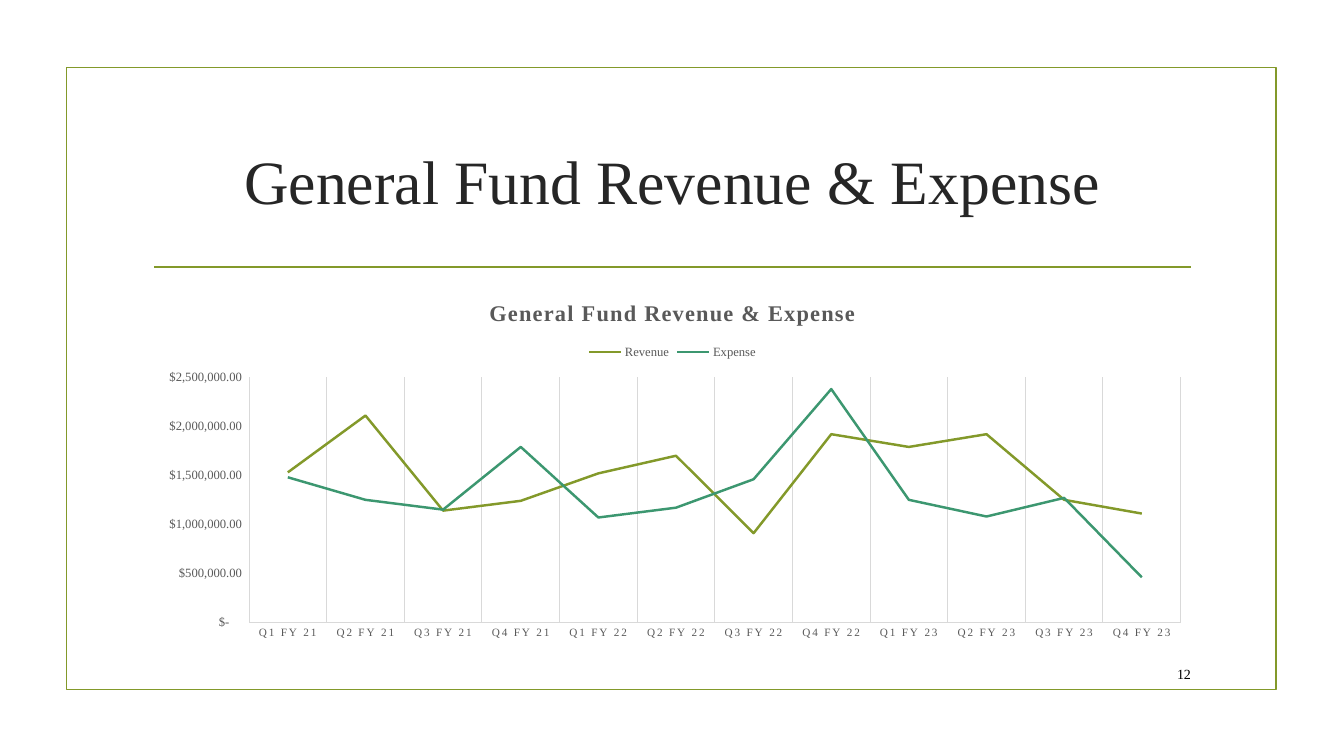
"""Build the General Fund revenue and expense slide."""
from dataclasses import dataclass

from pptx import Presentation
from pptx.chart.data import CategoryChartData
from pptx.dml.color import RGBColor as RGB
from pptx.enum.chart import XL_CHART_TYPE as CT, XL_LEGEND_POSITION as LP, XL_TICK_MARK as TM
from pptx.enum.shapes import MSO_CONNECTOR as MC, MSO_SHAPE as MS
from pptx.enum.text import MSO_ANCHOR as MA, PP_ALIGN as PA
from pptx.oxml import parse_xml
from pptx.oxml.ns import nsdecls, qn
from pptx.util import Inches, Pt

FONT = "Times New Roman"
COLORS = {"olive": "83992A", "teal": "3C9770", "title": "262626",
          "label": "595959", "grid": "D9D9D9", "black": "000000"}
HEADING = "General Fund Revenue & Expense"
QUARTERS = [f"Q{q} FY {year}" for year in (21, 22, 23) for q in range(1, 5)]
MONEY = '_("$"* #,##0.00_);_("$"* \\(#,##0.00\\);_("$"* "-"??_);_(@_)'
PLOT = {"x": 0.1, "y": 0.26, "w": 0.88, "h": 0.67}


@dataclass
class Series:
    name: str
    color: str
    thousands: tuple[int, ...]


@dataclass
class Label:
    text: str
    box: tuple[float, float, float, float]
    size: float
    color: str
    align: PA
    after: float = 0


SERIES = [
    Series("Revenue", "olive", (1530, 2110, 1140, 1240, 1520, 1700,
                                910, 1920, 1790, 1920, 1250, 1110)),
    Series("Expense", "teal", (1480, 1250, 1150, 1790, 1070, 1170,
                               1460, 2380, 1250, 1080, 1270, 460)),
]
LABELS = [
    Label(HEADING, (1.42, 1.07, 10.5, 1.43), 44, "title", PA.CENTER),
    Label("12", (11.32, 6.53, 0.59, 0.31), 10, "black", PA.RIGHT, 6),
]


def style_font(font, size: float, color: str, bold: bool = False) -> None:
    font.name, font.size, font.bold = FONT, Pt(size), bold
    font.color.rgb = RGB.from_string(COLORS[color])


def style_line(line, color: str, width: float) -> None:
    line.color.rgb = RGB.from_string(COLORS[color])
    line.width = Pt(width)


def write(tf, text: str, *, size: float, color: str, align: PA = PA.CENTER,
          bold: bool = False, after: float = 0, spacing: int = 0) -> None:
    p = tf.paragraphs[0]
    p.alignment, p.space_after = align, Pt(after)
    r = p.add_run()
    r.text = text
    style_font(r.font, size, color, bold)
    if spacing:
        r.font._element.set("spc", str(spacing)) if hasattr(r.font, "_element") else \
            r._r.get_or_add_rPr().set("spc", str(spacing))


def add_label(slide, label: Label) -> None:
    tf = slide.shapes.add_textbox(*map(Inches, label.box)).text_frame
    tf.word_wrap, tf.vertical_anchor = True, MA.MIDDLE
    write(tf, label.text, size=label.size, color=label.color,
          align=label.align, after=label.after)


def add_frame(slide) -> None:
    sp = slide.shapes.add_shape(MS.RECTANGLE, *map(Inches, (0.66, 0.67, 12, 6.17)))
    sp.shadow.inherit = False
    sp.fill.background()
    style_line(sp.line, "olive", 1.25)
    rule = slide.shapes.add_connector(MC.STRAIGHT, *map(Inches, (1.53, 2.65, 11.81, 2.65)))
    style_line(rule.line, "olive", 1.25)
    rule._element.spPr.append(parse_xml(f"<a:effectLst {nsdecls('a')}/>"))


def style_axis(axis, size: float) -> None:
    axis.major_tick_mark = axis.minor_tick_mark = TM.NONE
    style_font(axis.tick_labels.font, size, "label")
    style_line(axis.format.line, "grid", 0.75)


def place_plot(chart) -> None:
    plot_area = chart.element.xpath("c:chart/c:plotArea")[0]
    for old in plot_area.findall(qn("c:layout")):
        plot_area.remove(old)
    sizes = "".join(f'<c:{key} val="{val}"/>' for key, val in PLOT.items())
    plot_area.insert(0, parse_xml(
        f'<c:layout {nsdecls("c")}><c:manualLayout><c:layoutTarget val="inner"/>'
        f'<c:xMode val="edge"/><c:yMode val="edge"/>{sizes}</c:manualLayout></c:layout>'))


def add_fund_chart(slide) -> None:
    data = CategoryChartData(number_format=MONEY)
    data.categories = QUARTERS
    for s in SERIES:
        data.add_series(s.name, [v * 1000 for v in s.thousands])
    chart = slide.shapes.add_chart(
        CT.LINE, *map(Inches, (1.42, 2.8, 10.5, 3.63)), data).chart
    style_font(chart.font, 10, "black")
    chart.has_title = True
    write(chart.chart_title.text_frame, HEADING, size=16, color="label",
          bold=True, spacing=100)
    chart.chart_title.include_in_layout = False
    chart.has_legend = True
    chart.legend.position, chart.legend.include_in_layout = LP.TOP, False
    style_font(chart.legend.font, 9, "label")

    cat, val = chart.category_axis, chart.value_axis
    style_axis(cat, 8)
    style_axis(val, 9)
    cat.has_major_gridlines, val.has_major_gridlines = True, False
    style_line(cat.major_gridlines.format.line, "grid", 0.75)
    chart.element.xpath("c:chart/c:plotArea/c:catAx/c:txPr//a:defRPr")[0].set("spc", "120")
    val.minimum_scale, val.maximum_scale, val.major_unit = 0, 2500000, 500000
    val.tick_labels.number_format = MONEY
    val.tick_labels.number_format_is_linked = False

    plot = chart.plots[0]
    plot.vary_by_categories = False
    for line, s in zip(plot.series, SERIES):
        line.smooth = False
        style_line(line.format.line, s.color, 1.75)
    place_plot(chart)


def main() -> None:
    prs = Presentation()
    prs.slide_width, prs.slide_height = Inches(13.33), Inches(7.5)
    slide = prs.slides.add_slide(prs.slide_layouts[6])
    add_frame(slide)
    for label in LABELS:
        add_label(slide, label)
    add_fund_chart(slide)
    prs.save("out.pptx")


if __name__ == "__main__":
    main()
